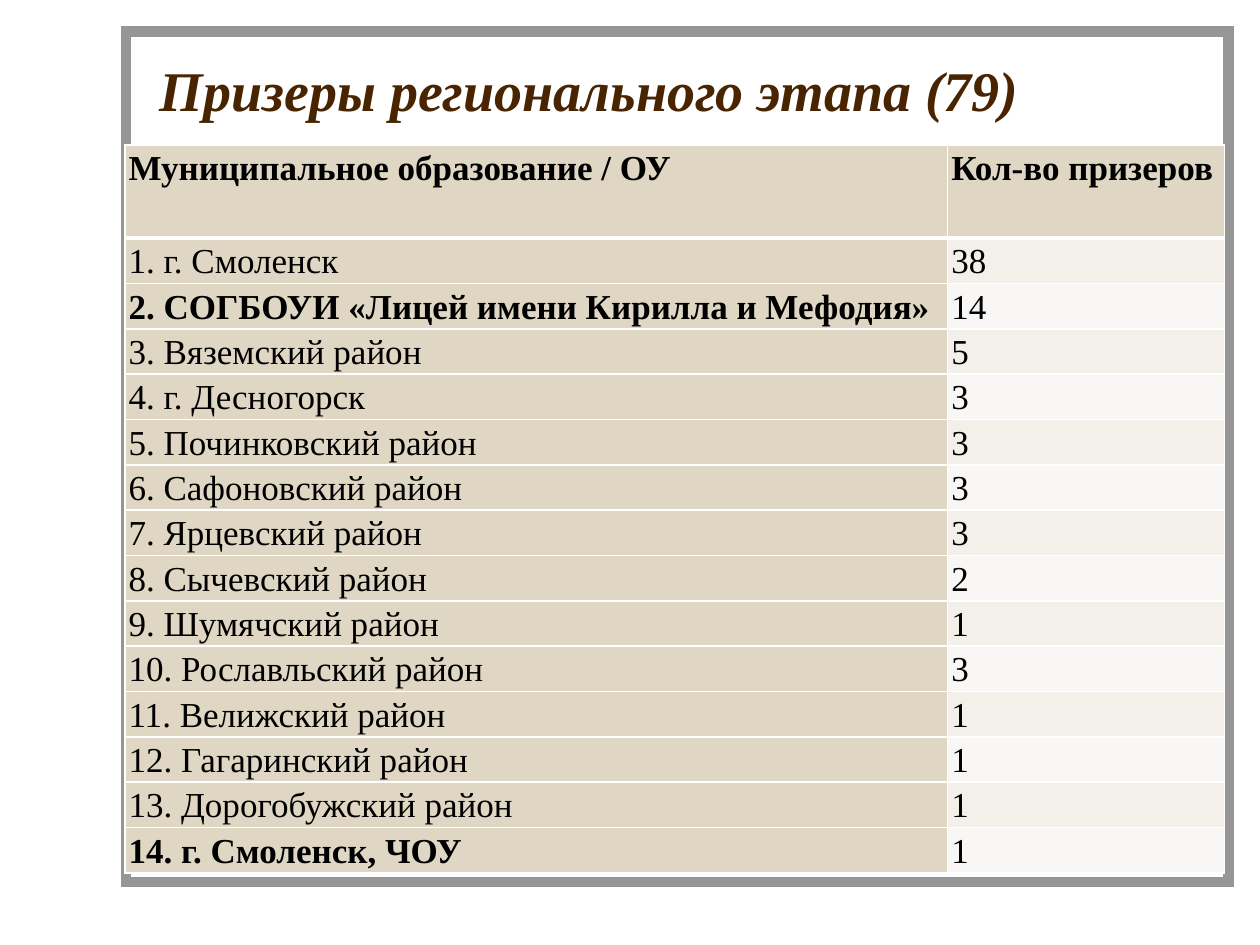
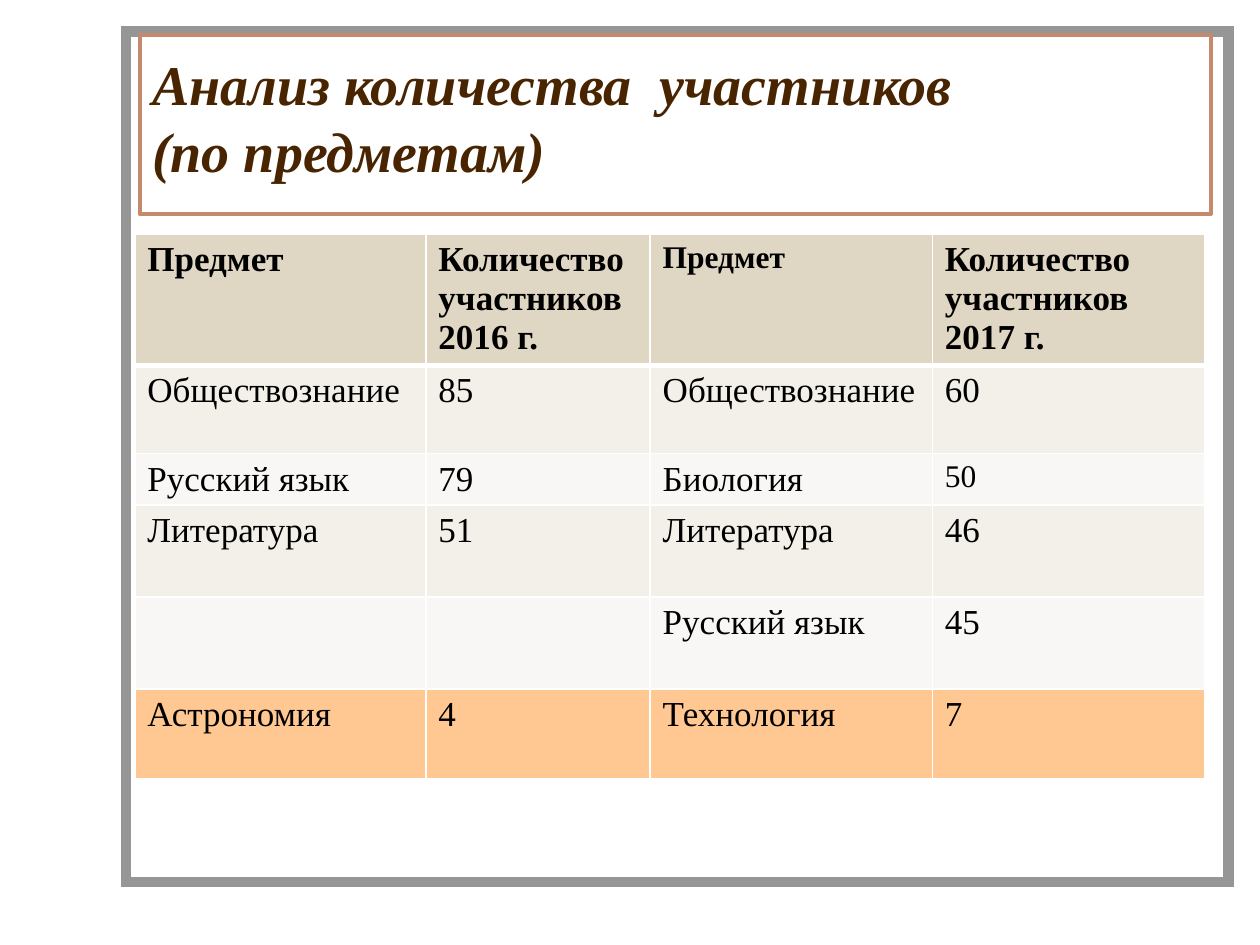
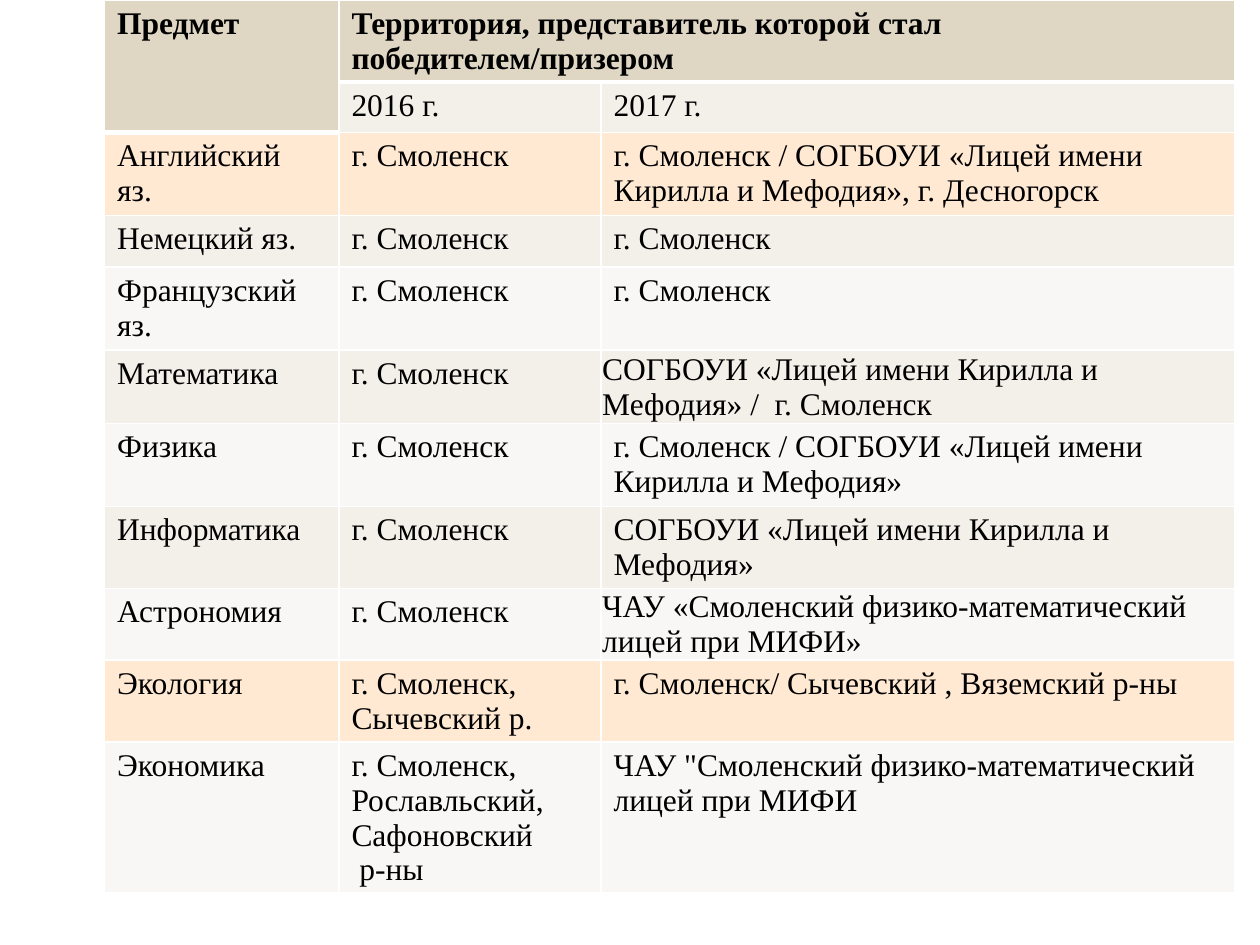
from dataclasses import dataclass
from pptx import Presentation
from pptx.dml.color import RGBColor
from pptx.enum.shapes import MSO_SHAPE
from pptx.enum.text import MSO_ANCHOR
from pptx.oxml import parse_xml
from pptx.oxml.ns import nsdecls
from pptx.util import Inches, Pt


@dataclass(frozen=True)
class Theme:
    font: str = "Times New Roman"
    white: str = "FFFFFF"
    black: str = "000000"
    brown: str = "482400"
    gray: str = "969696"
    rust: str = "C58A6E"
    sand: str = "DFD6C3"
    bands: tuple = ("F9F7F5", "F3F0E9")
    peach: str = "FFE9D3"
    orange: str = "FFC892"
    title: int = 32
    body: int = 20
    small: int = 18
    thin: int = 1
    thick: int = 3
    wide: float = 24
    mid: float = 22.1
    close: float = 19.9


T = Theme()
FRAME = (1, 0.25, 8.75, 6.75)
TIGHT = (0.03, 0.01, 0.03, 0)
FLUSH = (0.01, 0.01, 0.01, 0)
ROOMY = (0.1, 0.05, 0.1, 0.02)

AREAS = [
    ("Муниципальное образование / ОУ", "Кол-во призеров"),
    ("1. г. Смоленск", "38"),
    ("2. СОГБОУИ «Лицей имени Кирилла и Мефодия»", "14"),
    ("3. Вяземский район", "5"),
    ("4. г. Десногорск", "3"),
    ("5. Починковский район", "3"),
    ("6. Сафоновский район", "3"),
    ("7. Ярцевский район", "3"),
    ("8. Сычевский район", "2"),
    ("9. Шумячский район", "1"),
    ("10. Рославльский район", "3"),
    ("11. Велижский район", "1"),
    ("12. Гагаринский район", "1"),
    ("13. Дорогобужский район", "1"),
    ("14. г. Смоленск, ЧОУ", "1"),
]
COUNTS = [
    ("Предмет", "Количество участников\n2016 г.",
     "Предмет", "Количество участников\n2017 г."),
    ("Обществознание", "85", "Обществознание", "60"),
    ("Русский язык", "79", "Биология", "50"),
    ("Литература", "51", "Литература", "46"),
    ("", "", "Русский язык", "45"),
    ("Астрономия", "4", "Технология", "7"),
]
CITY = "г. Смоленск"
LYCEUM = "СОГБОУИ «Лицей имени Кирилла и Мефодия»"
WINNERS = [
    ("Предмет", "Территория, представитель которой стал  победителем/призером", ""),
    ("", "2016 г.", "2017 г."),
    ("Английский  яз.", CITY, f"{CITY} / {LYCEUM}, г. Десногорск"),
    ("Немецкий яз.", CITY, CITY),
    ("Французский яз.", CITY, CITY),
    ("Математика", CITY, f"{LYCEUM} /  {CITY}"),
    ("Физика", CITY, f"{CITY} / {LYCEUM}"),
    ("Информатика", CITY, LYCEUM),
    ("Астрономия", CITY, "ЧАУ «Смоленский физико-математический лицей при МИФИ»"),
    ("Экология", f"{CITY},\nСычевский р.", f"{CITY}/ Сычевский , Вяземский р-ны"),
    ("Экономика", f"{CITY}, Рославльский, Сафоновский\n р-ны",
     "ЧАУ \"Смоленский физико-математический лицей при МИФИ"),
]


def color(code):
    return RGBColor.from_string(code)


def write(frame, text, size=T.body, ink=T.black, bold=False, slant=False, lead=None):
    for num, line in enumerate(text.split("\n")):
        para = frame.paragraphs[0] if num == 0 else frame.add_paragraph()
        if lead:
            para.line_spacing = Pt(lead)
        run = para.add_run()
        run.text = line
        font = run.font
        font.name, font.size = T.font, Pt(size)
        font.bold, font.italic = bold, slant
        font.color.rgb = color(ink)
        para._p.append(parse_xml(
            f'<a:endParaRPr {nsdecls("a")} sz="{size * 100}">'
            f'<a:latin typeface="{T.font}"/></a:endParaRPr>'))


def inset(part, sides):
    (part.margin_left, part.margin_top,
     part.margin_right, part.margin_bottom) = map(Inches, sides)


def border(cell, top, bottom):
    props = cell._tc.get_or_add_tcPr()
    sides = (("L", T.thin), ("R", T.thin), ("T", top), ("B", bottom))
    for spot, (side, width) in enumerate(sides):
        props.insert(spot, parse_xml(
            f'<a:ln{side} {nsdecls("a")} w="{Pt(width)}"><a:solidFill>'
            f'<a:srgbClr val="{T.white}"/></a:solidFill></a:ln{side}>'))


def add_frame(slide, box):
    rect = slide.shapes.add_shape(MSO_SHAPE.RECTANGLE, *map(Inches, box))
    rect.shadow.inherit = False
    rect.fill.solid()
    rect.fill.fore_color.rgb = color(T.white)
    rect.line.color.rgb = color(T.gray)
    rect.line.width = Pt(6)
    rect.line._get_or_add_ln().append(
        parse_xml(f'<a:miter {nsdecls("a")} lim="800000"/>'))


def add_title(slide, box, text, line=None, lift=0.05):
    shape = slide.shapes.add_textbox(*map(Inches, box))
    frame = shape.text_frame
    frame.word_wrap = True
    frame.vertical_anchor = MSO_ANCHOR.MIDDLE
    inset(frame, (0.1, 0.05, 0.1, lift))
    write(frame, text, size=T.title, ink=T.brown, bold=True, slant=True)
    if line:
        shape.line.color.rgb = color(line)
        shape.line.width = Pt(2.25)


def add_grid(slide, spot, cols, rows, data, fills=None, heads=(), merges=(),
             side=False, sides=ROOMY, special=None, **base):
    fills, special = fills or {}, special or {}
    size = sum(cols), sum(rows)
    table = slide.shapes.add_table(
        len(rows), len(cols), *map(Inches, (*spot, *size))).table
    table.first_row = table.horz_banding = False
    for part, width in zip(table.columns, cols):
        part.width = Inches(width)
    for part, height in zip(table.rows, rows):
        part.height = Inches(height)

    def is_head(row, col):
        return row == 0 or (row, col) in heads

    def weight(row, col):
        return T.thick if row >= 0 and is_head(row, col) else T.thin

    for row, line in enumerate(data):
        for col, text in enumerate(line):
            cell = table.cell(row, col)
            head = is_head(row, col)
            sandy = head or (side and col == 0)
            fill = T.sand if sandy else fills.get(row, T.bands[row % 2])
            cell.fill.solid()
            cell.fill.fore_color.rgb = color(fill)
            border(cell, weight(row - 1, col), weight(row, col))
            look = {"bold": head, **base, **special.get((row, col), {})}
            inset(cell, look.pop("pad", sides))
            cell.vertical_anchor = look.pop("anchor", MSO_ANCHOR.TOP)
            if text:
                write(cell.text_frame, text, **look)
    for start, end in merges:
        table.cell(*start).merge(table.cell(*end))


def areas_slide(slide):
    add_title(slide, (1.17, 0.42, 8.5, 0.58), "Призеры регионального этапа (79)")
    strong = {"bold": True}
    add_grid(slide, (0.99, 1.15), (6.53, 2.2), [0.74] + [0.36] * 14, AREAS,
             side=True, sides=TIGHT, lead=T.wide,
             special={(2, 0): strong, (14, 0): strong})


def counts_slide(slide):
    add_title(slide, (1.11, 0.28, 8.5, 1.42),
              "Анализ количества  участников\n(по предметам)",
              line=T.rust, lift=0.18)
    small = {"size": T.small, "lead": T.close}
    add_grid(slide, (1.07, 1.86), (2.31, 1.78, 2.24, 2.16),
             (1.04, 0.7, 0.41, 0.73, 0.73, 0.71), COUNTS, lead=T.mid,
             fills={5: T.orange}, special={(0, 2): small, (2, 3): small})


def winners_slide(slide):
    add_grid(slide, (0.83, 0), (1.86, 2.08, 5.03),
             (0.65, 0.4, 0.66, 0.41, 0.66, 0.58, 0.66, 0.65, 0.57, 0.65, 1.2),
             WINNERS, fills={2: T.peach, 9: T.peach}, heads={(1, 0)},
             merges=(((0, 0), (1, 0)), ((0, 1), (0, 2))),
             size=T.small, lead=T.close,
             special={(5, 2): {"pad": FLUSH, "anchor": MSO_ANCHOR.MIDDLE},
                      (8, 2): {"pad": FLUSH}})


def main():
    deck = Presentation()
    deck.slide_width, deck.slide_height = Inches(10), Inches(7.5)
    for build in (areas_slide, counts_slide, winners_slide):
        slide = deck.slides.add_slide(deck.slide_layouts[6])
        add_frame(slide, FRAME)
        build(slide)
    deck.save("out.pptx")


if __name__ == "__main__":
    main()
